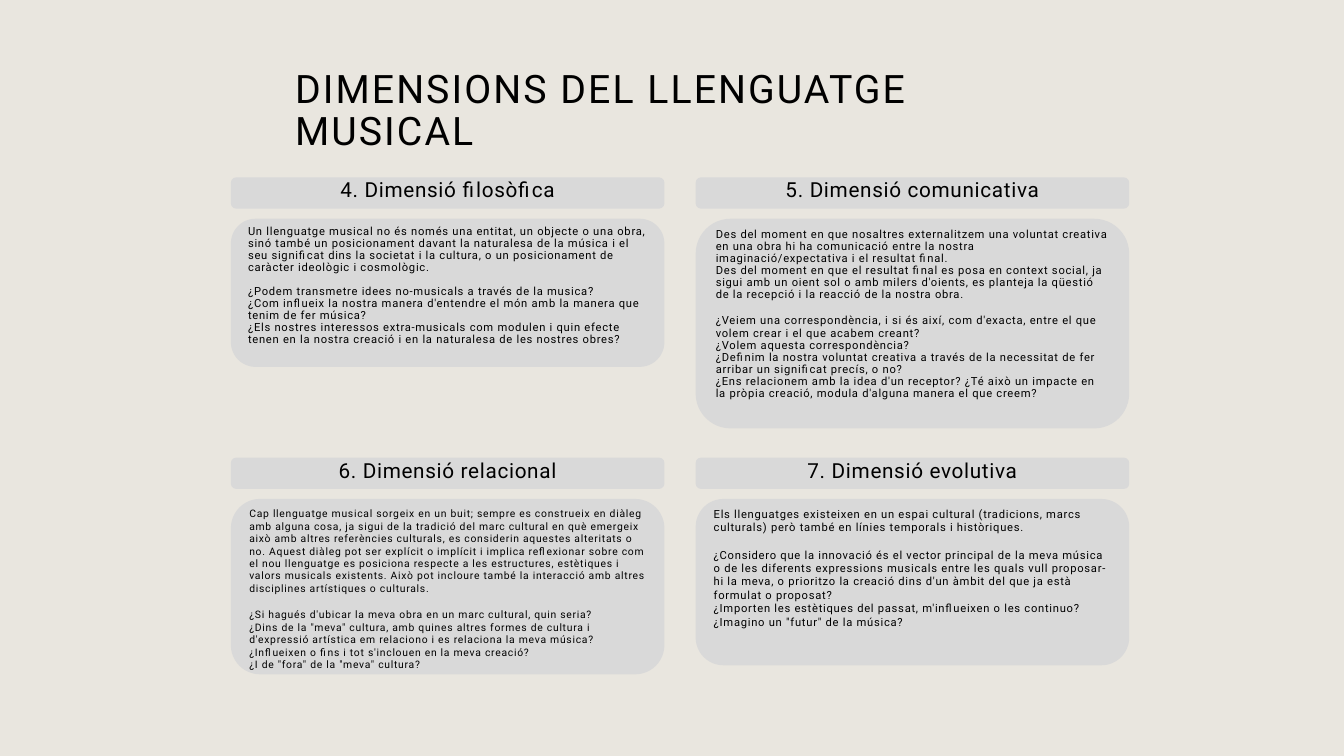
from dataclasses import dataclass

from pptx import Presentation
from pptx.dml.color import RGBColor
from pptx.enum.shapes import MSO_SHAPE
from pptx.enum.text import MSO_ANCHOR, PP_ALIGN
from pptx.shapes.autoshape import Shape
from pptx.slide import Slide
from pptx.text.text import TextFrame
from pptx.util import Inches, Pt

COLORS = {"background": "E9E6DF", "panel": "D9D9D9", "text": "000000"}
FONT = "Roboto"

# Grid, in inches: two columns and two rows of cards
LEFT, TOP = 2.29, 1.76
COLUMN_STEP, ROW_STEP = 4.61, 2.78
CARD_WIDTH, HEADING_HEIGHT, BODY_OFFSET = 4.3, 0.31, 0.41


@dataclass(frozen=True)
class Card:
    column: int
    row: int
    heading: str
    body_height: float
    size: float
    spacing: float
    gap: float  # points between the statement and the questions
    statement: tuple[str, ...]
    questions: tuple[str, ...]


CARDS = [
    Card(0, 0, "4. Dimensió filosòfica", 1.47, 8, 0.9, 8.5,
         ("Un llenguatge musical no és només una entitat, un objecte o una obra, "
          "sinó també un posicionament davant la naturalesa de la música i el seu "
          "significat dins la societat i la cultura, o un posicionament de caràcter "
          "ideològic i cosmològic.",),
         ("¿Podem transmetre idees no-musicals a través de la musica?",
          "¿Com influeix la nostra manera d'entendre el món amb la manera que tenim "
          "de fer música?",
          "¿Els nostres interessos extra-musicals com modulen i quin efecte tenen en "
          "la nostra creació i en la naturalesa de les nostres obres?")),
    Card(1, 0, "5. Dimensió comunicativa", 2.08, 8, 0.9, 10,
         ("Des del moment en que nosaltres externalitzem una voluntat creativa en una "
          "obra hi ha comunicació entre la nostra imaginació/expectativa i el "
          "resultat final.",
          "Des del moment en que el resultat final es posa en context social, ja sigui "
          "amb un oient sol o amb milers d'oients, es planteja la qüestió de la "
          "recepció i la reacció de la nostra obra."),
         ("¿Veiem una correspondència, i si és així, com d'exacta, entre el que volem "
          "crear i el que acabem creant?",
          "¿Volem aquesta correspondència?",
          "¿Definim la nostra voluntat creativa a través de la necessitat de fer "
          "arribar un significat precís, o no?",
          "¿Ens relacionem amb la idea d'un receptor? ¿Té això un impacte en la pròpia "
          "creació, modula d'alguna manera el que creem?")),
    Card(0, 1, "6. Dimensió relacional", 1.74, 7.4, 1, 10,
         ("Cap llenguatge musical sorgeix en un buit; sempre es construeix en diàleg "
          "amb alguna cosa, ja sigui de la tradició del marc cultural en què emergeix "
          "això amb altres referències culturals, es considerin aquestes alteritats o "
          "no. Aquest diàleg pot ser explícit o implícit i implica reflexionar sobre "
          "com el nou llenguatge es posiciona respecte a les estructures, estètiques i "
          "valors musicals existents. Això pot incloure també la interacció amb altres "
          "disciplines artístiques o culturals.",),
         ("¿Si hagués d'ubicar la meva obra en un marc cultural, quin seria?",
          "¿Dins de la \"meva\" cultura, amb quines altres formes de cultura i "
          "d'expressió artística em relaciono i es relaciona la meva música? "
          "¿Influeixen o fins i tot s'inclouen en la meva creació?",
          "¿I de \"fora\" de la \"meva\" cultura?")),
    Card(1, 1, "7. Dimensió evolutiva", 1.65, 8, 1, 10,
         ("Els llenguatges existeixen en un espai cultural (tradicions, marcs "
          "culturals) però també en línies temporals i històriques.",),
         ("¿Considero que la innovació és el vector principal de la meva música o de "
          "les diferents expressions musicals entre les quals vull proposar-hi la "
          "meva, o prioritzo la creació dins d'un àmbit del que ja està formulat o "
          "proposat?",
          "¿Importen les estètiques del passat, m'influeixen o les continuo?",
          "¿Imagino un \"futur\" de la música?")),
]


def add_text(tf: TextFrame, text: str, size: float, line_spacing: float,
             tracking: float = 0.5, align: PP_ALIGN = PP_ALIGN.LEFT,
             before: float = 0) -> None:
    """Write one paragraph, filling the first one if it is still empty."""
    p = tf.paragraphs[0] if not tf.text else tf.add_paragraph()
    p.alignment = align
    p.line_spacing = line_spacing
    p.space_before = Pt(before)
    r = p.add_run()
    r.text = text
    r.font.size = Pt(size)
    r.font.name = FONT
    r.font.color.rgb = RGBColor.from_string(COLORS["text"])
    r._r.get_or_add_rPr().set("spc", str(int(tracking * 100)))


def add_panel(s: Slide, left: float, top: float, height: float) -> Shape:
    sp = s.shapes.add_shape(MSO_SHAPE.ROUNDED_RECTANGLE, Inches(left), Inches(top),
                            Inches(CARD_WIDTH), Inches(height))
    sp.shadow.inherit = False
    sp.fill.solid()
    sp.fill.fore_color.rgb = RGBColor.from_string(COLORS["panel"])
    sp.line.fill.background()
    sp.text_frame.word_wrap = True
    sp.text_frame.vertical_anchor = MSO_ANCHOR.TOP
    return sp


def add_card(s: Slide, card: Card) -> None:
    left = LEFT + card.column * COLUMN_STEP
    top = TOP + card.row * ROW_STEP

    # Heading bar
    heading = add_panel(s, left, top, HEADING_HEIGHT)
    add_text(heading.text_frame, card.heading, 14.8, 0.7, align=PP_ALIGN.CENTER)

    # Statement, then questions after a gap
    tf = add_panel(s, left, top + BODY_OFFSET, card.body_height).text_frame
    tf.margin_top = 0
    for line in card.statement:
        add_text(tf, line, card.size, card.spacing)
    for i, line in enumerate(card.questions):
        add_text(tf, line, card.size, card.spacing, before=0 if i else card.gap)


def add_title(s: Slide) -> None:
    sp = s.shapes.add_textbox(Inches(2.83), Inches(0.56), Inches(8.13), Inches(1.1))
    tf = sp.text_frame
    tf.word_wrap = True
    tf.vertical_anchor = MSO_ANCHOR.MIDDLE
    add_text(tf, "DIMENSIONS DEL LLENGUATGE MUSICAL", 28, 0.9, tracking=1.5)


def main() -> None:
    prs = Presentation()
    prs.slide_width, prs.slide_height = Inches(13.33), Inches(7.5)
    s = prs.slides.add_slide(prs.slide_layouts[6])
    s.background.fill.solid()
    s.background.fill.fore_color.rgb = RGBColor.from_string(COLORS["background"])
    for card in CARDS:
        add_card(s, card)
    add_title(s)
    prs.save("out.pptx")


if __name__ == "__main__":
    main()
